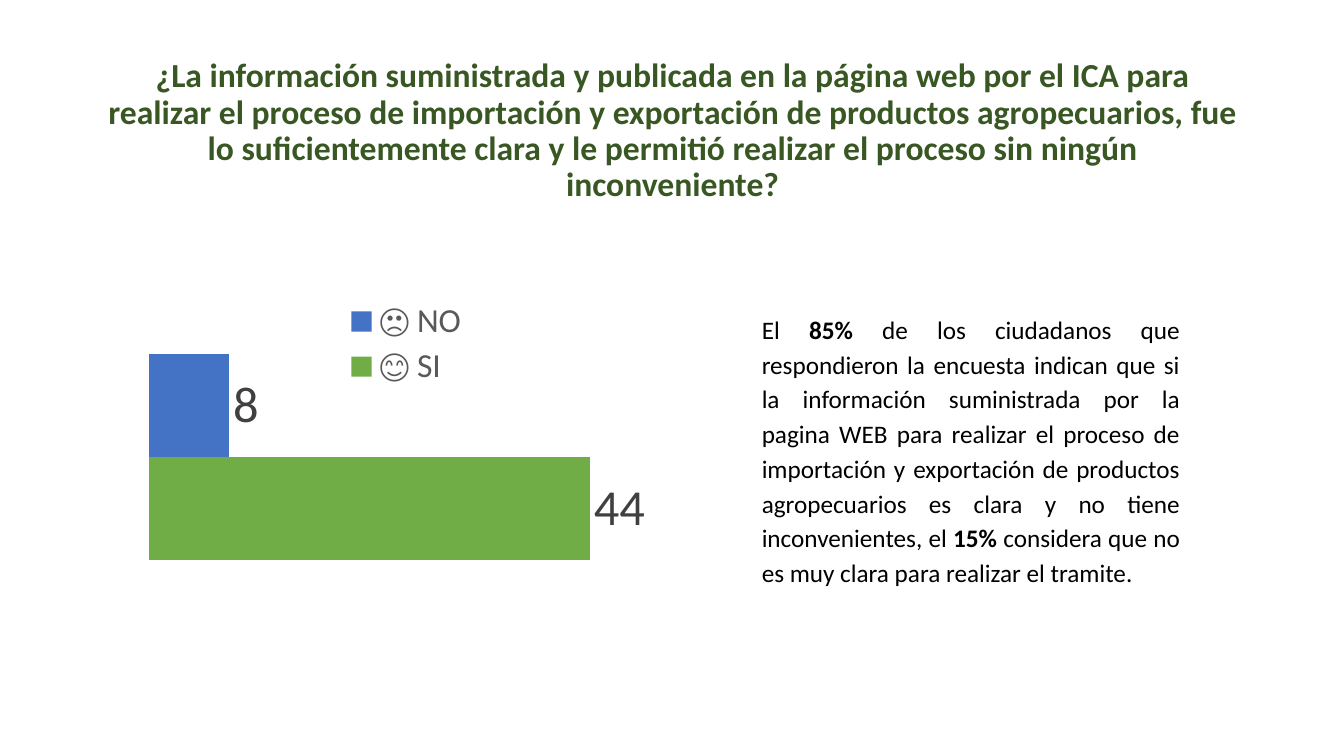
"""Build the survey slide about the clarity of the import and export information."""
from dataclasses import dataclass

from lxml import etree
from pptx import Presentation
from pptx import util as u
from pptx.chart.data import CategoryChartData
from pptx.dml.color import RGBColor
from pptx.enum import chart as ch
from pptx.enum import text
from pptx.oxml.ns import qn

WIDTH, HEIGHT = u.Inches(13.33), u.Inches(7.5)
FONT = "Calibri"
BLACK = RGBColor(0x00, 0x00, 0x00)
DARK_GREEN = RGBColor(0x38, 0x57, 0x23)
GREEN = RGBColor(0x70, 0xAD, 0x47)
BLUE = RGBColor(0x44, 0x72, 0xC4)
LEGEND_GREY = RGBColor(0x59, 0x59, 0x59)
LABEL_GREY = RGBColor(0x40, 0x40, 0x40)


@dataclass(frozen=True)
class Area:
    """Position and size as shares of the slide."""
    left: float
    top: float
    width: float
    height: float

    def box(self) -> tuple[int, int, int, int]:
        return (int(self.left * WIDTH), int(self.top * HEIGHT),
                int(self.width * WIDTH), int(self.height * HEIGHT))


@dataclass(frozen=True)
class Run:
    words: str
    bold: bool = False


@dataclass(frozen=True)
class TextBlock:
    area: Area
    runs: tuple[Run, ...]
    size: int
    color: RGBColor
    alignment: text.PP_ALIGN
    anchor: text.MSO_ANCHOR
    line_spacing: float
    left_inset: float = 0.1
    top_inset: float = 0.05
    right_inset: float = 0.1


@dataclass(frozen=True)
class Answer:
    name: str
    count: int
    color: RGBColor


TEXT_BLOCKS = (
    TextBlock(
        Area(0.069, 0.053, 0.863, 0.193),
        (Run("¿La información suministrada y publicada en la página web por el ICA para "
             "realizar el proceso de importación y exportación de productos agropecuarios, "
             "fue lo suficientemente clara y le permitió realizar el proceso sin ningún "
             "inconveniente?", True),),
        24, DARK_GREEN, text.PP_ALIGN.CENTER, text.MSO_ANCHOR.MIDDLE, 0.9,
        top_inset=0.41),
    TextBlock(
        Area(0.503, 0.403, 0.456, 0.385),
        (Run("El "), Run("85% ", True),
         Run("de los ciudadanos que respondieron la encuesta indican que si la información "
             "suministrada por la pagina WEB para realizar el proceso de importación y "
             "exportación de productos agropecuarios es clara y no tiene inconvenientes, el "),
         Run("15% ", True),
         Run("considera que no es muy clara para realizar el tramite.")),
        18, BLACK, text.PP_ALIGN.JUSTIFY, text.MSO_ANCHOR.TOP, 1.15,
        left_inset=0.85, right_inset=1.08),
)
CHART_AREA = Area(0.101, 0.333, 0.497, 0.543)
PLOT_SHARE = Area(0.02, 0.02, 0.75, 0.96)
LEGEND_SHARE = Area(0.31, 0.11, 0.19, 0.23)
ANSWERS = (Answer("😊 SI", 44, GREEN), Answer("🙁 NO", 8, BLUE))


def style_font(font, size: int, color: RGBColor) -> None:
    font.name, font.size = FONT, u.Pt(size)
    font.color.rgb = color


def add_text(slide, block: TextBlock) -> None:
    frame = slide.shapes.add_textbox(*block.area.box()).text_frame
    frame.word_wrap = True
    frame.vertical_anchor = block.anchor
    frame.margin_left = u.Inches(block.left_inset)
    frame.margin_top = u.Inches(block.top_inset)
    frame.margin_right = u.Inches(block.right_inset)
    paragraph = frame.paragraphs[0]
    paragraph.alignment = block.alignment
    paragraph.line_spacing = block.line_spacing
    for item in block.runs:
        run = paragraph.add_run()
        run.text = item.words
        style_font(run.font, block.size, block.color)
        run.font.bold = item.bold


def place(element, share: Area, inner: bool = False) -> None:
    """Give a chart part a manual layout, in shares of the chart."""
    for old in element.findall(qn("c:layout")):
        element.remove(old)
    layout = etree.Element(qn("c:layout"))
    manual = etree.SubElement(layout, qn("c:manualLayout"))
    settings = [("layoutTarget", "inner")] if inner else []
    settings += [("xMode", "edge"), ("yMode", "edge"), ("x", share.left),
                 ("y", share.top), ("w", share.width), ("h", share.height)]
    for tag, value in settings:
        etree.SubElement(manual, qn(f"c:{tag}")).set("val", str(value))
    position = element.find(qn("c:legendPos"))
    element.insert(0 if position is None else 1, layout)


def add_answer_chart(slide) -> None:
    data = CategoryChartData()
    data.categories = ["1"]
    for answer in ANSWERS:
        data.add_series(answer.name, [answer.count])
    chart = slide.shapes.add_chart(
        ch.XL_CHART_TYPE.BAR_CLUSTERED, *CHART_AREA.box(), data).chart
    style_font(chart.font, 10, BLACK)
    chart.has_title = False
    chart.value_axis.minimum_scale, chart.value_axis.maximum_scale = 0, 50
    chart.value_axis.has_major_gridlines = False
    for axis in (chart.category_axis, chart.value_axis):
        axis.visible = False
    chart.has_legend = True
    chart.legend.position = ch.XL_LEGEND_POSITION.RIGHT
    chart.legend.include_in_layout = False
    style_font(chart.legend.font, 24, LEGEND_GREY)
    plot = chart.plots[0]
    plot.gap_width, plot.overlap, plot.vary_by_categories = 182, 0, False
    for series, answer in zip(plot.series, ANSWERS):
        series.format.fill.solid()
        series.format.fill.fore_color.rgb = answer.color
        labels = series.data_labels
        labels.show_value = True
        labels.position = ch.XL_LABEL_POSITION.OUTSIDE_END
        style_font(labels.font, 36, LABEL_GREY)
    plot_area = chart.element.find(f".//{qn('c:plotArea')}")
    place(plot_area, PLOT_SHARE, inner=True)
    place(chart.element.find(f".//{qn('c:legend')}"), LEGEND_SHARE)


def main() -> None:
    presentation = Presentation()
    presentation.slide_width, presentation.slide_height = WIDTH, HEIGHT
    slide = presentation.slides.add_slide(presentation.slide_layouts[6])
    for block in TEXT_BLOCKS:
        add_text(slide, block)
    add_answer_chart(slide)
    presentation.save("out.pptx")


if __name__ == "__main__":
    main()
